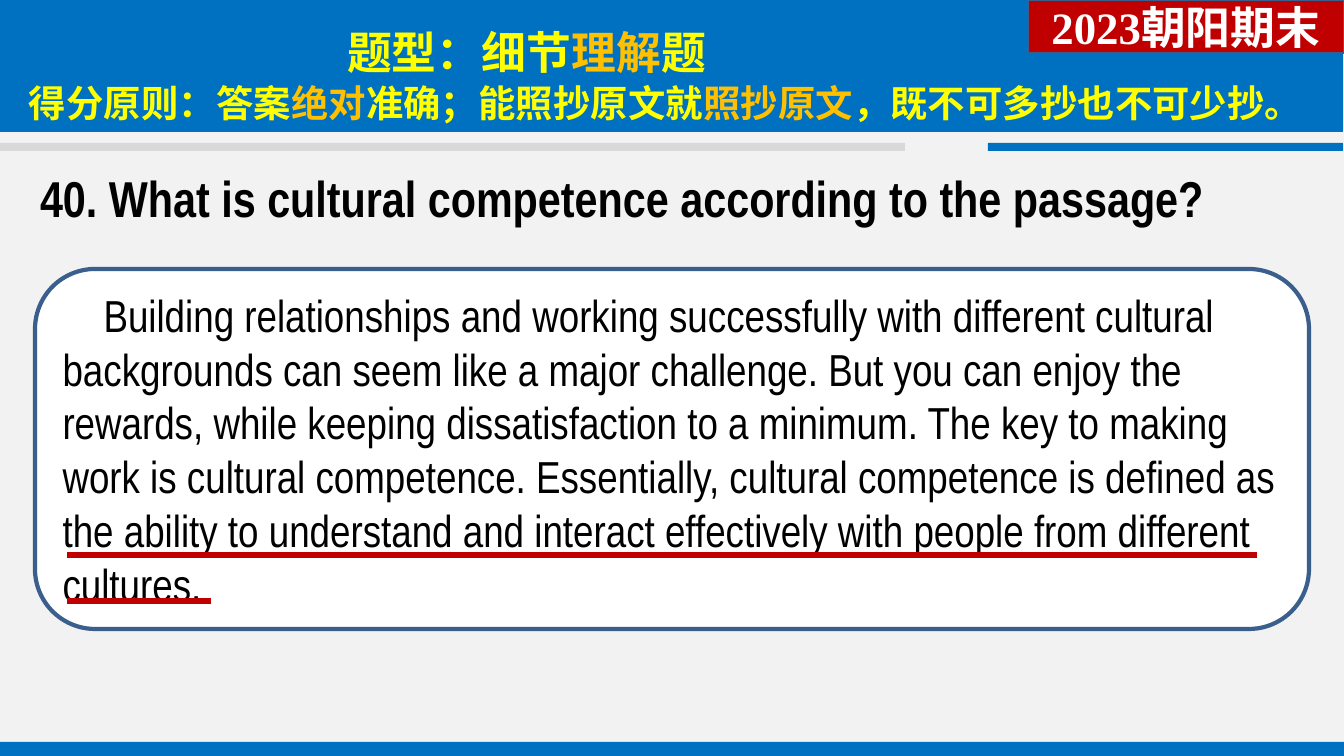
import dataclasses

import pptx
import pptx.dml.color
import pptx.enum.shapes
import pptx.enum.text
import pptx.oxml.ns
import pptx.util
from lxml import etree


@dataclasses.dataclass(frozen=True)
class Theme:
    background: str = "F2F2F2"
    blue: str = "0070C0"
    grey: str = "D9D9D9"
    red: str = "C00000"
    outline: str = "3A5F8C"
    white: str = "FFFFFF"
    black: str = "000000"
    yellow: str = "FFFF00"
    orange: str = "FFC000"
    english: str = "Arial Narrow"
    chinese: str = "Noto Sans CJK SC"
    serif: str = "Times New Roman"
    question_size: float = 36
    large_size: float = 32
    principle_size: float = 26.7


THEME = Theme()

# Content: runs are (text, colour)
QUESTION_TYPE = [("题型：细节", THEME.yellow), ("理解", THEME.orange), ("题", THEME.yellow)]
PRINCIPLE = [
    ("得分原则：答案", THEME.yellow),
    ("绝对", THEME.orange),
    ("准确；能照抄原文就", THEME.yellow),
    ("照抄原文", THEME.orange),
    ("，既不可多抄也不可少抄。", THEME.yellow),
]
QUESTION = [("40. What is cultural competence according to the passage?", THEME.black)]
PASSAGE = [(
    "Building relationships and working successfully with different cultural "
    "backgrounds can seem like a major challenge. But you can enjoy the rewards, "
    "while keeping dissatisfaction to a minimum. The key to making work is cultural "
    "competence. Essentially, cultural competence is defined as the ability to "
    "understand and interact effectively with people from different cultures.",
    THEME.black,
)]
EXAM = [("2023朝阳期末", THEME.white)]

# Layout in px: left, top, width, height
SLIDE_SIZE = (1344, 756)
BANDS = [
    ((0, 742, 1344, 17), THEME.blue),
    ((-1, 0, 1344, 132), THEME.blue),
    ((-1, 143, 906, 8), THEME.grey),
    ((988, 143, 355, 8), THEME.blue),
]
TYPE_BOX = (334, 18, 914, 68)
PRINCIPLE_BOX = (16, 73, 1295, 104)
QUESTION_BOX = (33, 163, 1277, 459)
PASSAGE_BOX = (35, 269, 1274, 360)
EXAM_BOX = (1028, 0, 316, 53)
PASSAGE_INDENT = 41
UNDERLINES = [(67, 1257, 555), (67, 211, 601)]  # from x, to x, y

HEADING_INSETS = (13, 7)
QUESTION_INSETS = (7, 4)
BOX_INSETS = (10, 5)


def px(length):
    return pptx.util.Emu(round(length * 914400 / 100.8))


def colour(value):
    return pptx.dml.color.RGBColor.from_string(value)


def place(part, box):
    part.left, part.top, part.width, part.height = map(px, box)


def write(part, runs, *, size, font, bold=False, insets=BOX_INSETS, indent=0,
          align=pptx.enum.text.PP_ALIGN.LEFT, anchor=pptx.enum.text.MSO_ANCHOR.TOP):
    frame = part.text_frame
    frame.word_wrap = True
    frame.auto_size = pptx.enum.text.MSO_AUTO_SIZE.NONE
    frame.vertical_anchor = anchor
    frame.margin_left = frame.margin_right = px(insets[0])
    frame.margin_top = frame.margin_bottom = px(insets[1])
    paragraph = frame.paragraphs[0]
    paragraph.alignment = align
    properties = paragraph._p.get_or_add_pPr()
    properties.set("marL", "0")
    properties.set("indent", str(px(indent)))
    etree.SubElement(properties, pptx.oxml.ns.qn("a:buNone"))
    for text, text_colour in runs:
        run = paragraph.add_run()
        run.text = text
        run.font.size = pptx.util.Pt(size)
        run.font.bold = bold
        run.font.color.rgb = colour(text_colour)
        run.font.name = font
        east_asian = etree.SubElement(run._r.get_or_add_rPr(), pptx.oxml.ns.qn("a:ea"))
        east_asian.set("typeface", THEME.chinese)


def add_panel(slide, kind, box, fill, line_width=0):
    panel = slide.shapes.add_shape(kind, *map(px, box))
    panel.shadow.inherit = False
    panel.fill.solid()
    panel.fill.fore_color.rgb = colour(fill)
    if line_width:
        panel.line.color.rgb = colour(THEME.outline)
        panel.line.width = pptx.util.Pt(line_width)
    else:
        panel.line.fill.background()
    return panel


def add_underline(slide, start, end, y):
    underline = slide.shapes.add_connector(
        pptx.enum.shapes.MSO_CONNECTOR.STRAIGHT, px(start), px(y), px(end), px(y))
    underline.line.color.rgb = colour(THEME.red)
    underline.line.width = pptx.util.Pt(4.5)
    etree.SubElement(underline._element.spPr, pptx.oxml.ns.qn("a:effectLst"))


def main():
    presentation = pptx.Presentation()
    presentation.slide_width, presentation.slide_height = map(px, SLIDE_SIZE)
    slide = presentation.slides.add_slide(presentation.slide_layouts[1])
    slide.background.fill.solid()
    slide.background.fill.fore_color.rgb = colour(THEME.background)
    question_type, question = slide.placeholders
    rectangle = pptx.enum.shapes.MSO_SHAPE.RECTANGLE
    middle = pptx.enum.text.MSO_ANCHOR.MIDDLE

    # Bands behind the headings
    for box, fill in BANDS:
        band = add_panel(slide, rectangle, box, fill)
        question_type.element.addprevious(band.element)

    # Headings
    place(question_type, TYPE_BOX)
    write(question_type, QUESTION_TYPE, size=THEME.large_size, font=THEME.chinese,
          bold=True, insets=HEADING_INSETS)
    principle = slide.shapes.add_textbox(*map(px, PRINCIPLE_BOX))
    write(principle, PRINCIPLE, size=THEME.principle_size, font=THEME.chinese,
          bold=True, insets=HEADING_INSETS)

    # Question and passage
    place(question, QUESTION_BOX)
    write(question, QUESTION, size=THEME.question_size, font=THEME.english,
          bold=True, insets=QUESTION_INSETS)
    passage = add_panel(slide, pptx.enum.shapes.MSO_SHAPE.ROUNDED_RECTANGLE,
                        PASSAGE_BOX, THEME.white, line_width=3)
    write(passage, PASSAGE, size=THEME.large_size, font=THEME.english,
          indent=PASSAGE_INDENT, anchor=middle)

    # Answer underlines
    for start, end, y in UNDERLINES:
        add_underline(slide, start, end, y)

    # Exam label
    exam = add_panel(slide, rectangle, EXAM_BOX, THEME.red, line_width=2)
    write(exam, EXAM, size=THEME.large_size, font=THEME.serif, bold=True,
          align=pptx.enum.text.PP_ALIGN.CENTER, anchor=middle)

    presentation.save("out.pptx")


if __name__ == "__main__":
    main()
